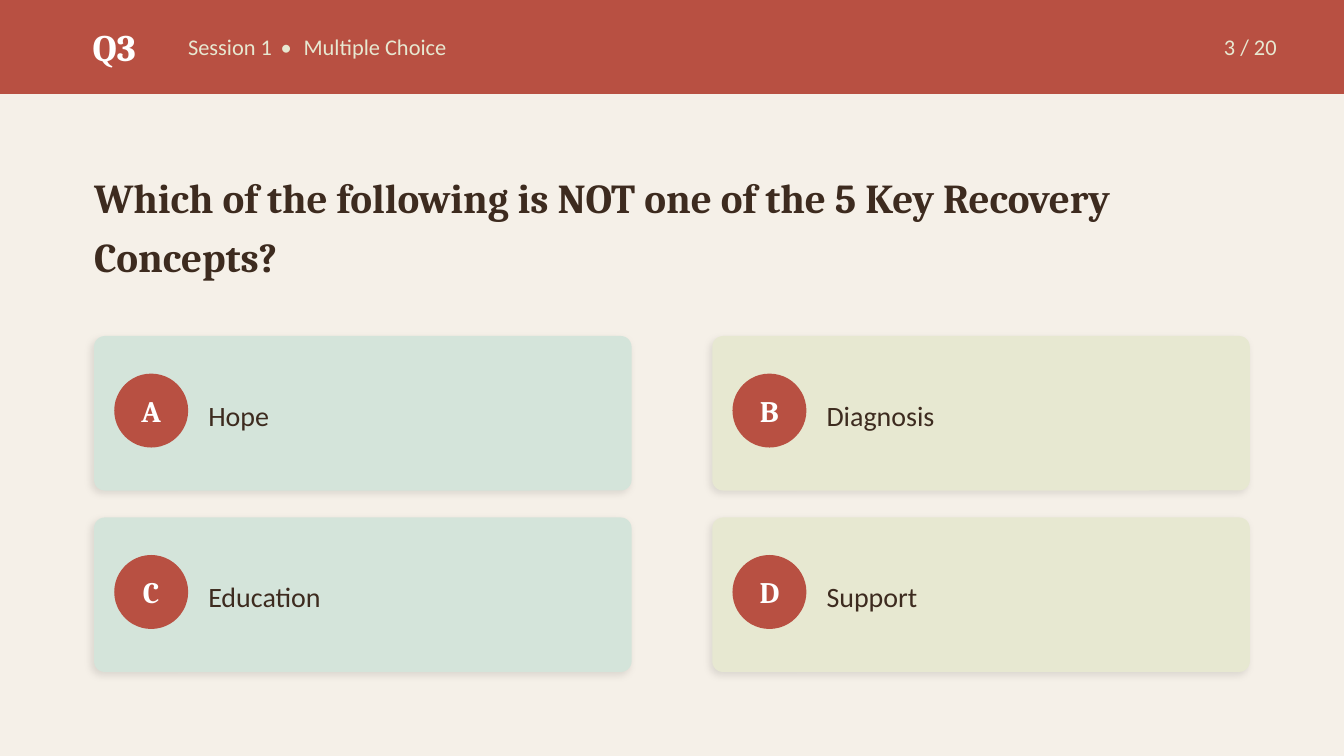
"""Build a multiple-choice quiz slide with four answer cards."""
import lxml.etree
import pptx
import pptx.dml.color
import pptx.enum.shapes
import pptx.enum.text
import pptx.oxml.ns
import pptx.util

PX = 4572
RUST, CREAM, MINT, SAND = "B85042", "F5F0E8", "D4E4DA", "E7E8D1"
BROWN, WHITE = "3D2B1F", "FFFFFF"
SHAPE = pptx.enum.shapes.MSO_SHAPE
ALIGN = pptx.enum.text.PP_ALIGN
rgb = pptx.dml.color.RGBColor.from_string


def add_block(page, kind, bounds, color):
    block = page.shapes.add_shape(kind, *(PX * length for length in bounds))
    block.shadow.inherit = False
    block.fill.solid()
    block.fill.fore_color.rgb = rgb(color)
    block.line.fill.background()
    return block


def write(box, parts, size, font, color, align=ALIGN.LEFT, spacing=1.0):
    frame = box.text_frame
    frame.word_wrap = True
    frame.auto_size = pptx.enum.text.MSO_AUTO_SIZE.NONE
    frame.vertical_anchor = pptx.enum.text.MSO_ANCHOR.MIDDLE
    frame.margin_left = frame.margin_top = frame.margin_right = frame.margin_bottom = 0
    para = frame.paragraphs[0]
    para.alignment = align
    para.line_spacing = spacing
    for part in parts:
        span = para.add_run()
        span.text = part
        span.font.size = pptx.util.Pt(size)
        span.font.name = font
        span.font.bold = font == "Cambria"
        span.font.color.rgb = rgb(color)
    return para


deck = pptx.Presentation()
deck.slide_width, deck.slide_height = 2000 * PX, 1125 * PX
page = deck.slides.add_slide(deck.slide_layouts[5])
page.background.fill.solid()
page.background.fill.fore_color.rgb = rgb(CREAM)

add_block(page, SHAPE.RECTANGLE, (0, 0, 2000, 140), RUST)
header = [
    (100, 140, ["Q3"], 20, "Cambria", WHITE, ALIGN.CENTER),
    (280, 1000, ["Session 1", " • ", "Multiple Choice"], 12, "Calibri", SAND, ALIGN.LEFT),
    (1600, 300, ["3 / 20"], 12, "Calibri", SAND, ALIGN.RIGHT),
]
for left, width, parts, size, font, color, align in header:
    box = page.shapes.add_textbox(left * PX, 16 * PX, width * PX, 108 * PX)
    para = write(box, parts, size, font, color, align)
    for span in para.runs[1:2]:
        span._r.get_or_add_rPr().set("spc", "180")

title = page.shapes.title
title.left, title.top, title.width, title.height = 140 * PX, 220 * PX, 1720 * PX, 220 * PX
question = "Which of the following is NOT one of the 5 Key Recovery Concepts?"
write(title, [question], 22, "Cambria", BROWN, spacing=1.2)

for index, answer in enumerate(["Hope", "Diagnosis", "Education", "Support"]):
    row, column = divmod(index, 2)
    left, top = 140 + 920 * column, 500 + 270 * row

    card = add_block(page, SHAPE.ROUNDED_RECTANGLE, (left, top, 800, 230), (MINT, SAND)[column])
    card.adjustments[0] = 0.07
    effects = card._element.spPr.find(pptx.oxml.ns.qn("a:effectLst"))
    shadow = lxml.etree.SubElement(
        effects, pptx.oxml.ns.qn("a:outerShdw"), blurRad="50800", dist="25400",
        dir="8100000", algn="bl", rotWithShape="0")
    tint = lxml.etree.SubElement(shadow, pptx.oxml.ns.qn("a:srgbClr"), val="000000")
    lxml.etree.SubElement(tint, pptx.oxml.ns.qn("a:alpha"), val="10000")

    badge = add_block(page, SHAPE.OVAL, (left + 30, top + 56, 110, 110), RUST)
    write(badge, ["ABCD"[index]], 16, "Cambria", WHITE, ALIGN.CENTER)

    box = page.shapes.add_textbox((left + 170) * PX, (top + 20) * PX, 580 * PX, 190 * PX)
    write(box, [answer], 15, "Calibri", BROWN, spacing=1.1)

deck.save("out.pptx")
